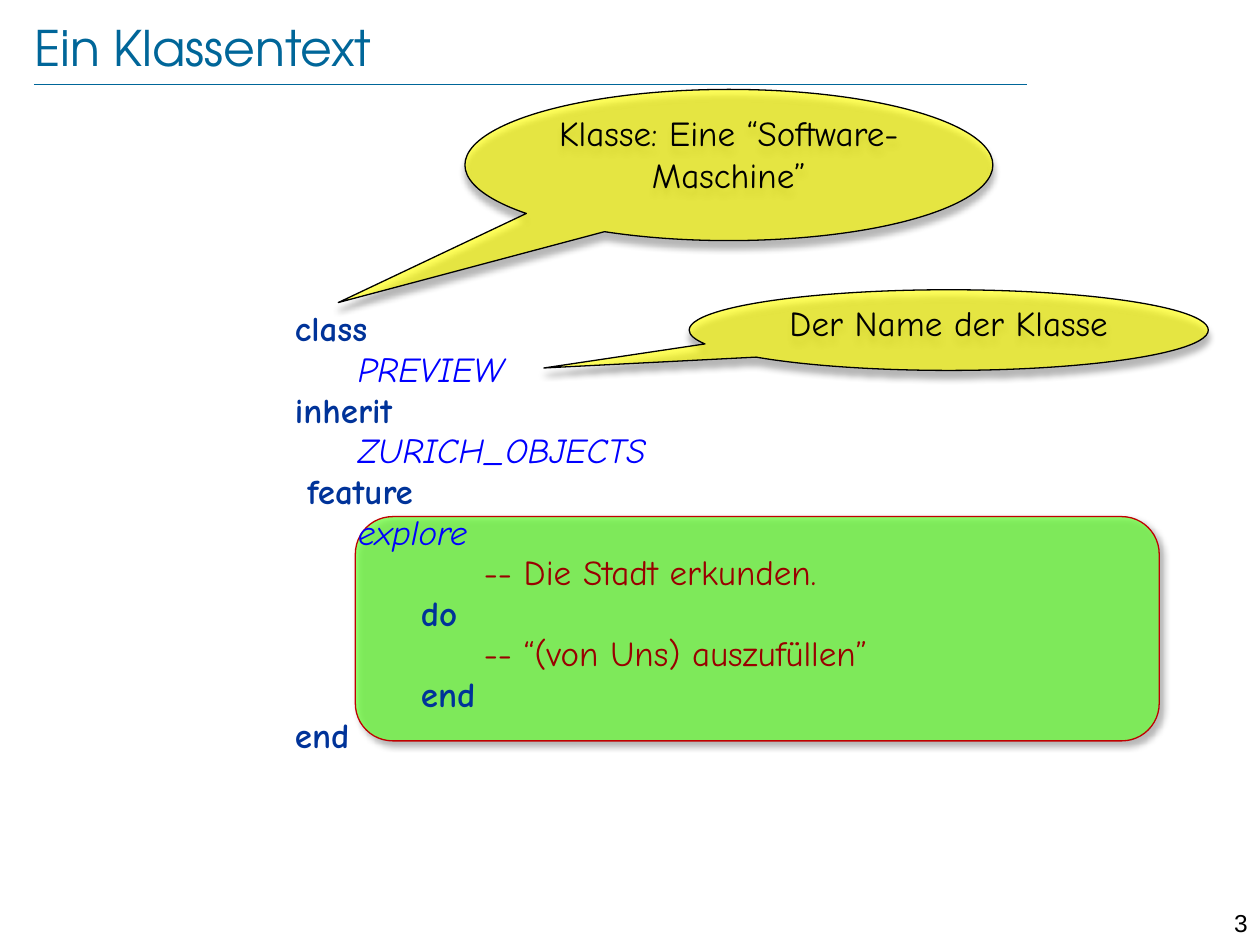
"""Build the slide that annotates the parts of a class text."""
from lxml import etree
from pptx import Presentation
from pptx import util as u
from pptx.dml.color import RGBColor
from pptx.enum import shapes, text
from pptx.oxml.ns import qn

COLORS = {"title": "006699", "keyword": "003399", "name": "0000FF", "comment": "990000",
          "black": "000000", "bubble": "FFFF00", "panel": "66FF33", "panel_edge": "C00000"}
CODE_FONT = "Comic Neue"


def add_span(para, words, size, font, color, bold=False, italic=False):
    span = para.add_run()
    span.text = words
    span.font.size, span.font.name = u.Pt(size), font
    span.font.bold, span.font.italic = bold, italic
    span.font.color.rgb = RGBColor.from_string(COLORS[color])


def add_panel(kind, place, fill, edge, opacity, shadow):
    shape = slide.shapes.add_shape(kind, *map(u.Inches, place))
    shape.fill.solid()
    shape.fill.fore_color.rgb = RGBColor.from_string(COLORS[fill])
    shape.line.color.rgb = RGBColor.from_string(COLORS[edge])
    shape.line.width = u.Pt(0.75)
    shape.shadow.inherit = False
    properties = shape._element.spPr
    fill_color = properties.find(qn("a:solidFill")).find(qn("a:srgbClr"))
    etree.SubElement(fill_color, qn("a:alpha"), val=str(opacity * 1000))
    strength, blur, distance, angle = shadow
    outer = etree.SubElement(properties.find(qn("a:effectLst")), qn("a:outerShdw"),
                             blurRad=str(u.Pt(blur)), dist=str(u.Pt(distance)),
                             dir=str(angle * 60000), algn="ctr", rotWithShape="0")
    shadow_color = etree.SubElement(outer, qn("a:srgbClr"), val=COLORS["black"])
    etree.SubElement(shadow_color, qn("a:alpha"), val=str(strength * 1000))
    return shape


deck = Presentation()
deck.slide_width, deck.slide_height = u.Inches(10), u.Inches(7.5)
slide = deck.slides.add_slide(deck.slide_layouts[1])
title, body = slide.placeholders

title.left, title.top, title.width, title.height = map(u.Inches, (0.27, 0.13, 8.69, 0.48))
frame = title.text_frame
frame.margin_left = frame.margin_right = frame.margin_top = frame.margin_bottom = 0
frame.vertical_anchor = text.MSO_ANCHOR.MIDDLE
frame.auto_size = text.MSO_AUTO_SIZE.NONE
frame.paragraphs[0].alignment = text.PP_ALIGN.LEFT
add_span(frame.paragraphs[0], "Ein Klassentext", 28, "TeX Gyre Adventor", "title")

rule = slide.shapes.add_connector(shapes.MSO_CONNECTOR.STRAIGHT, u.Inches(0.27), u.Inches(0.67),
                                  u.Inches(8.15), u.Inches(0.67))
rule.line.color.rgb = RGBColor.from_string(COLORS["title"])
rule.line.width = u.Pt(0.25)
etree.SubElement(rule._element.spPr, qn("a:effectLst"))

panel = add_panel(shapes.MSO_SHAPE.FLOWCHART_ALTERNATE_PROCESS, (2.82, 4.1, 6.38, 1.78),
                  "panel", "panel_edge", 70, (40, 4, 3, 45))
body._element.addprevious(panel._element)

body.left, body.top, body.width, body.height = map(u.Inches, (2.24, 2.45, 7.37, 3.54))
frame = body.text_frame
frame.auto_size = text.MSO_AUTO_SIZE.NONE
frame.vertical_anchor = text.MSO_ANCHOR.TOP
code_lines = [
    ("class", "keyword"),
    ("\tPREVIEW", "name"),
    ("inherit", "keyword"),
    ("\tZURICH_OBJECTS", "name"),
    (" feature", "keyword"),
    ("\texplore", "name"),
    ("\t\t\t-- Die Stadt erkunden.", "comment"),
    ("\t\tdo", "keyword"),
    ("\t\t\t-- “(von Uns) auszufüllen”", "comment"),
    ("\t\tend", "keyword"),
    ("end", "keyword"),
]
for index, (words, role) in enumerate(code_lines):
    para = frame.add_paragraph() if index else frame.paragraphs[0]
    layout = para._p.get_or_add_pPr()
    layout.set("marL", "0")
    layout.set("indent", "0")
    etree.SubElement(layout, qn("a:buNone"))
    tabs = etree.SubElement(layout, qn("a:tabLst"))
    for stop in (0.6, 1.19, 1.79):
        etree.SubElement(tabs, qn("a:tab"), pos=str(u.Inches(stop)), algn="l")
    para.line_spacing = 0.8
    para.space_before = u.Pt(4 if index else 0)
    add_span(para, words, 20, CODE_FONT, role, bold=role == "keyword", italic=role == "name")

callouts = [
    ("Klasse: Eine “Software-Maschine”", (3.69, 0.71, 4.19, 1.2), (-0.74, 0.91)),
    ("Der Name der Klasse", (5.47, 2.3, 4.12, 0.64), (-0.78, 0.47)),
]
for words, place, tip in callouts:
    bubble = add_panel(shapes.MSO_SHAPE.OVAL_CALLOUT, place, "bubble", "black", 64, (43, 4, 4, 90))
    bubble.adjustments[0], bubble.adjustments[1] = tip
    frame = bubble.text_frame
    frame.word_wrap = True
    frame.margin_left = frame.margin_right = frame.margin_top = frame.margin_bottom = 0
    frame.vertical_anchor = text.MSO_ANCHOR.TOP
    frame.paragraphs[0].alignment = text.PP_ALIGN.CENTER
    add_span(frame.paragraphs[0], words, 20, CODE_FONT, "black")

number = slide.shapes.add_textbox(*map(u.Inches, (9.45, 7.16, 0.55, 0.24)))
number.text_frame.word_wrap = True
number.text_frame.paragraphs[0].alignment = text.PP_ALIGN.RIGHT
add_span(number.text_frame.paragraphs[0], "3", 14, "Arial", "black")

deck.save("out.pptx")
